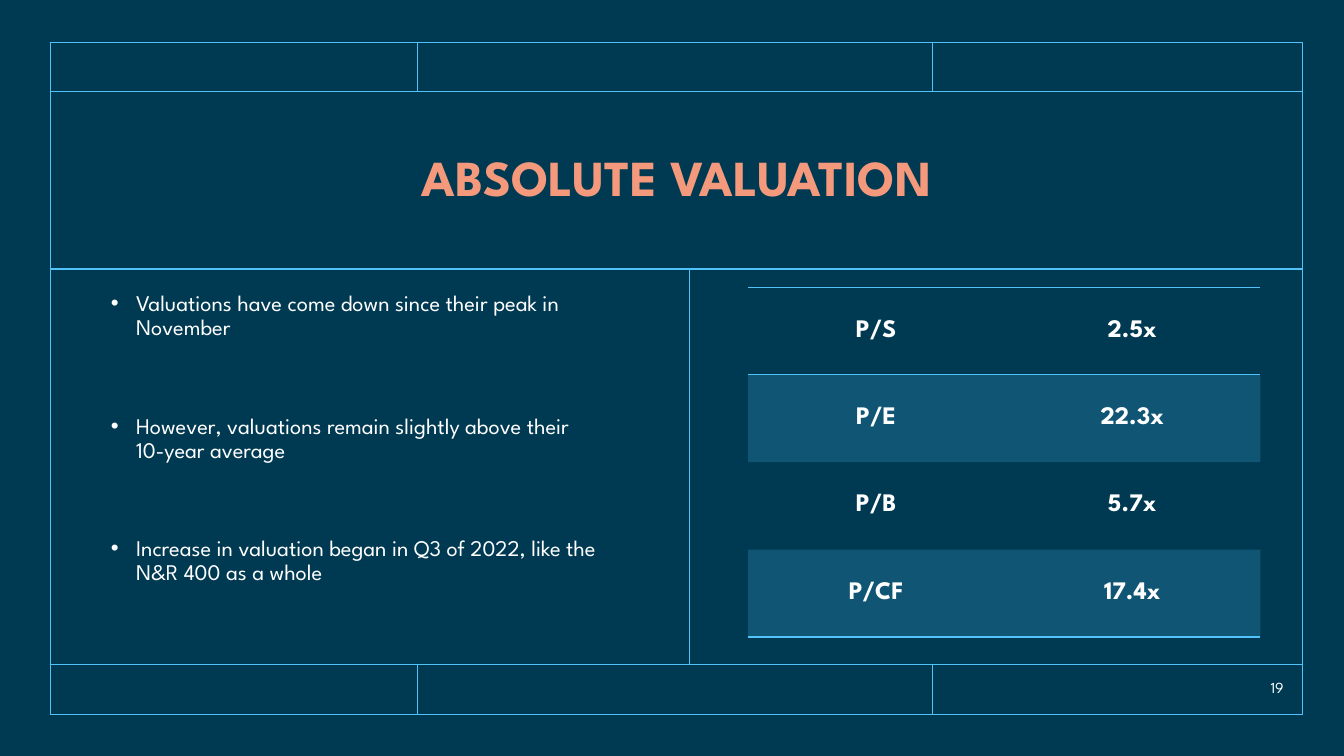
from dataclasses import dataclass

from lxml.etree import SubElement
from pptx import Presentation
from pptx.dml.color import RGBColor
from pptx.enum.shapes import MSO_CONNECTOR as Connector, MSO_SHAPE as Shape
from pptx.enum.text import MSO_ANCHOR as Anchor, MSO_AUTO_SIZE as AutoSize, PP_ALIGN as Align
from pptx.oxml.ns import qn
from pptx.util import Emu, Pt

EMU_PER_PX = 9144  # 100 px to the inch
NO_STYLE_TABLE = "{2D5ABB26-0587-4C30-8999-92F81FD0307C}"


@dataclass(frozen=True)
class Theme:
    background: str = "003A52"
    line: str = "51C3F9"
    title: str = "F4997C"
    text: str = "FFFFFF"
    font: str = "League Spartan"
    title_size: int = 36
    body_size: int = 16
    table_size: int = 18
    number_size: int = 11
    line_width: int = 1
    band_alpha: int = 20


@dataclass(frozen=True)
class Box:
    left: int
    top: int
    width: int
    height: int

    @property
    def right(self) -> int:
        return self.left + self.width

    @property
    def bottom(self) -> int:
        return self.top + self.height

    def emu(self) -> tuple:
        return tuple(map(px, (self.left, self.top, self.width, self.height)))


@dataclass(frozen=True)
class Rule:
    x1: int
    y1: int
    x2: int
    y2: int


@dataclass(frozen=True)
class Ratio:
    name: str
    value: str


def px(length: int) -> Emu:
    return Emu(length * EMU_PER_PX)


THEME = Theme()
FRAME = Box(50, 42, 1242, 667)
HEADER_Y, TITLE_Y, FOOTER_Y = 91, 267, 659
TITLE = Box(FRAME.left, HEADER_Y, FRAME.width, TITLE_Y - HEADER_Y)
BODY = Box(100, 285, 508, 347)
TABLE = Box(742, 285, 508, 347)
NUMBER = Box(1191, 667, 92, 30)

RULES = [
    *(Rule(x, top, x, bottom)
      for x in (414, 925)
      for top, bottom in ((FRAME.top, HEADER_Y), (FOOTER_Y, FRAME.bottom))),
    *(Rule(FRAME.left, y, FRAME.right, y) for y in (HEADER_Y, FOOTER_Y, TITLE_Y)),
    Rule(684, TITLE_Y, 684, FOOTER_Y),
]
POINTS = [
    "Valuations have come down since their peak in November",
    "However, valuations remain slightly above their 10-year average",
    "Increase in valuation began in Q3 of 2022, like the N&R 400 as a whole",
]
RATIOS = [
    Ratio("P/S", "2.5x"),
    Ratio("P/E", "22.3x"),
    Ratio("P/B", "5.7x"),
    Ratio("P/CF", "17.4x"),
]


def set_all(target, **values) -> None:
    for name, value in values.items():
        setattr(target, name, value)


def write(para, text: str, size: int, color: str = THEME.text, bold: bool = False, **layout) -> None:
    set_all(para, **layout)
    span = para.add_run()
    span.text = text
    set_all(span.font, name=THEME.font, size=Pt(size), bold=bold)
    span.font.color.rgb = RGBColor.from_string(color)


def place(shape, box: Box) -> None:
    set_all(shape, **dict(zip(("left", "top", "width", "height"), box.emu())))


def style_line(line) -> None:
    line.color.rgb = RGBColor.from_string(THEME.line)
    line.width = Pt(THEME.line_width)


def draw_frame(page, box: Box) -> None:
    frame = page.shapes.add_shape(Shape.RECTANGLE, *box.emu())
    frame.shadow.inherit = False
    frame.fill.background()
    style_line(frame.line)


def draw_rule(page, rule: Rule) -> None:
    ends = map(px, (rule.x1, rule.y1, rule.x2, rule.y2))
    connector = page.shapes.add_connector(Connector.STRAIGHT, *ends)
    style_line(connector.line)
    SubElement(connector._element.spPr, qn("a:effectLst"))


def fill_title(title, text: str) -> None:
    place(title, TITLE)
    set_all(title.text_frame, vertical_anchor=Anchor.MIDDLE, auto_size=AutoSize.NONE, word_wrap=True)
    write(title.text_frame.paragraphs[0], text, THEME.title_size, THEME.title, bold=True,
          alignment=Align.CENTER, line_spacing=0.9)


def fill_points(body, points: list[str]) -> None:
    place(body, BODY)
    frame = body.text_frame
    set_all(frame, vertical_anchor=Anchor.TOP, auto_size=AutoSize.NONE, word_wrap=True)
    for index, point in enumerate(points):
        para = frame.add_paragraph() if index else frame.paragraphs[0]
        write(para, point, THEME.body_size, line_spacing=0.9,
              space_before=Pt(53 if index else 0), alignment=Align.LEFT)
        props = para._p.get_or_add_pPr()
        props.set("marL", str(px(25)))
        props.set("indent", str(px(-25)))
        color = SubElement(props, qn("a:buClr"))
        SubElement(color, qn("a:srgbClr"), val=THEME.text)
        SubElement(props, qn("a:buFont"), typeface="Arial")
        SubElement(props, qn("a:buChar"), char="•")


def add_border(cell, side: str) -> None:
    border = SubElement(cell._tc.get_or_add_tcPr(), qn(f"a:{side}"), w=str(Pt(THEME.line_width)))
    fill = SubElement(border, qn("a:solidFill"))
    SubElement(fill, qn("a:srgbClr"), val=THEME.line)


def fill_band(cell, banded: bool) -> None:
    if not banded:
        cell.fill.background()
        return
    cell.fill.solid()
    cell.fill.fore_color.rgb = RGBColor.from_string(THEME.line)
    color = cell._tc.tcPr.find(f"{qn('a:solidFill')}/{qn('a:srgbClr')}")
    SubElement(color, qn("a:alpha"), val=str(THEME.band_alpha * 1000))


def draw_ratios(page, ratios: list[Ratio]) -> None:
    table = page.shapes.add_table(len(ratios), 2, *TABLE.emu()).table
    set_all(table, first_row=False, horz_banding=False)
    table._tbl.tblPr.find(qn("a:tableStyleId")).text = NO_STYLE_TABLE
    borders = {0: ("lnT", "lnB"), len(ratios) - 1: ("lnB",)}
    for row, ratio in enumerate(ratios):
        for column, text in enumerate((ratio.name, ratio.value)):
            cell = table.cell(row, column)
            cell.vertical_anchor = Anchor.MIDDLE
            write(cell.text_frame.paragraphs[0], text, THEME.table_size, bold=True,
                  alignment=Align.CENTER)
            for side in borders.get(row, ()):
                add_border(cell, side)
            fill_band(cell, banded=row % 2 == 1)


def draw_number(page, number: str) -> None:
    frame = page.shapes.add_textbox(*NUMBER.emu()).text_frame
    set_all(frame, word_wrap=True, vertical_anchor=Anchor.MIDDLE)
    write(frame.paragraphs[0], number, THEME.number_size, alignment=Align.RIGHT)


def main() -> None:
    deck = Presentation()
    set_all(deck, slide_width=px(1333), slide_height=px(750))
    page = deck.slides.add_slide(deck.slide_layouts[1])
    page.background.fill.solid()
    page.background.fill.fore_color.rgb = RGBColor.from_string(THEME.background)
    draw_frame(page, FRAME)
    for rule in RULES:
        draw_rule(page, rule)
    fill_title(page.shapes.title, "ABSOLUTE VALUATION")
    fill_points(page.placeholders[1], POINTS)
    draw_ratios(page, RATIOS)
    draw_number(page, "19")
    deck.save("out.pptx")


if __name__ == "__main__":
    main()
